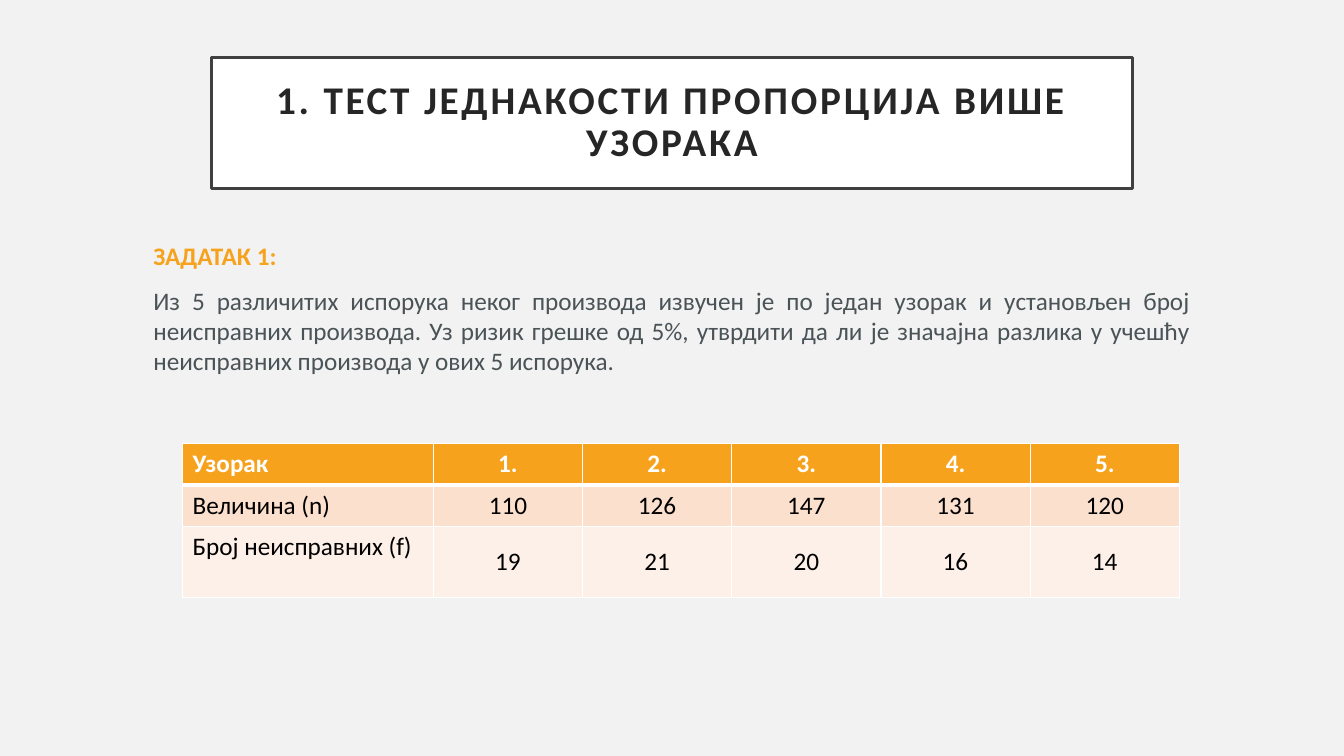
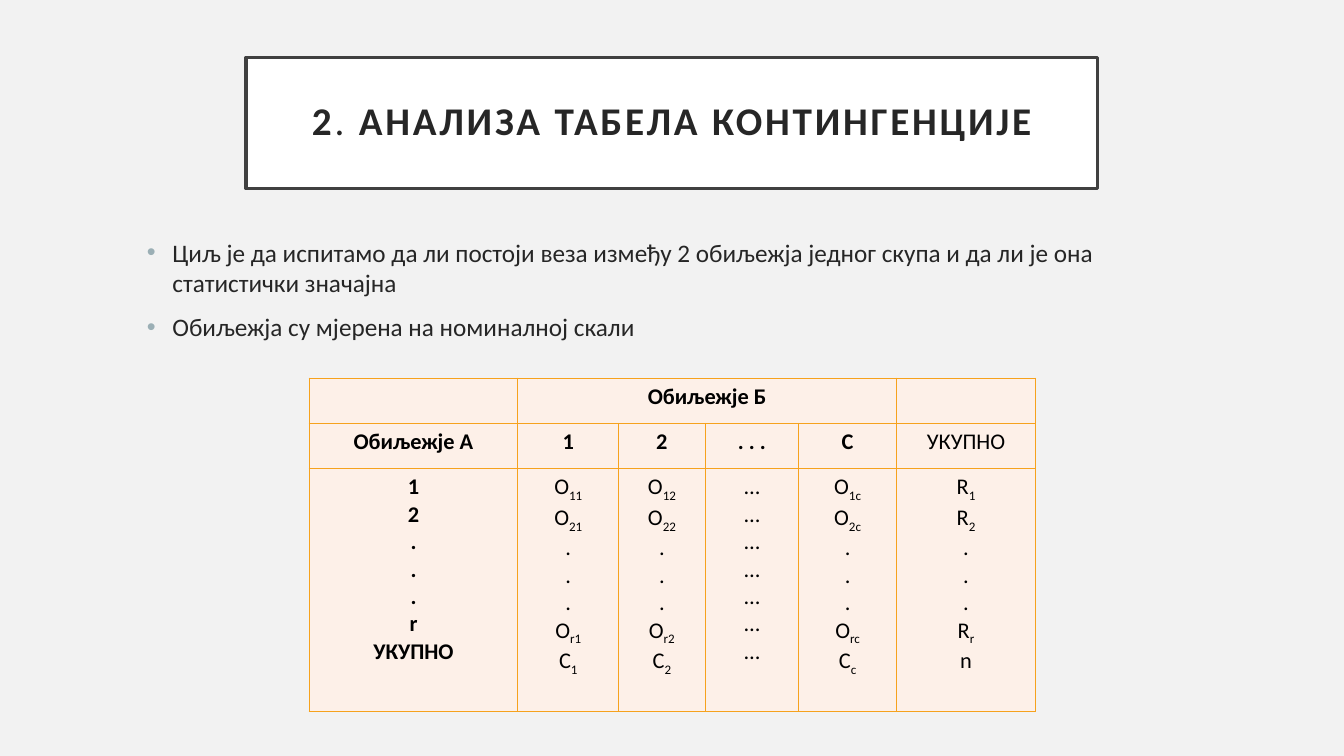
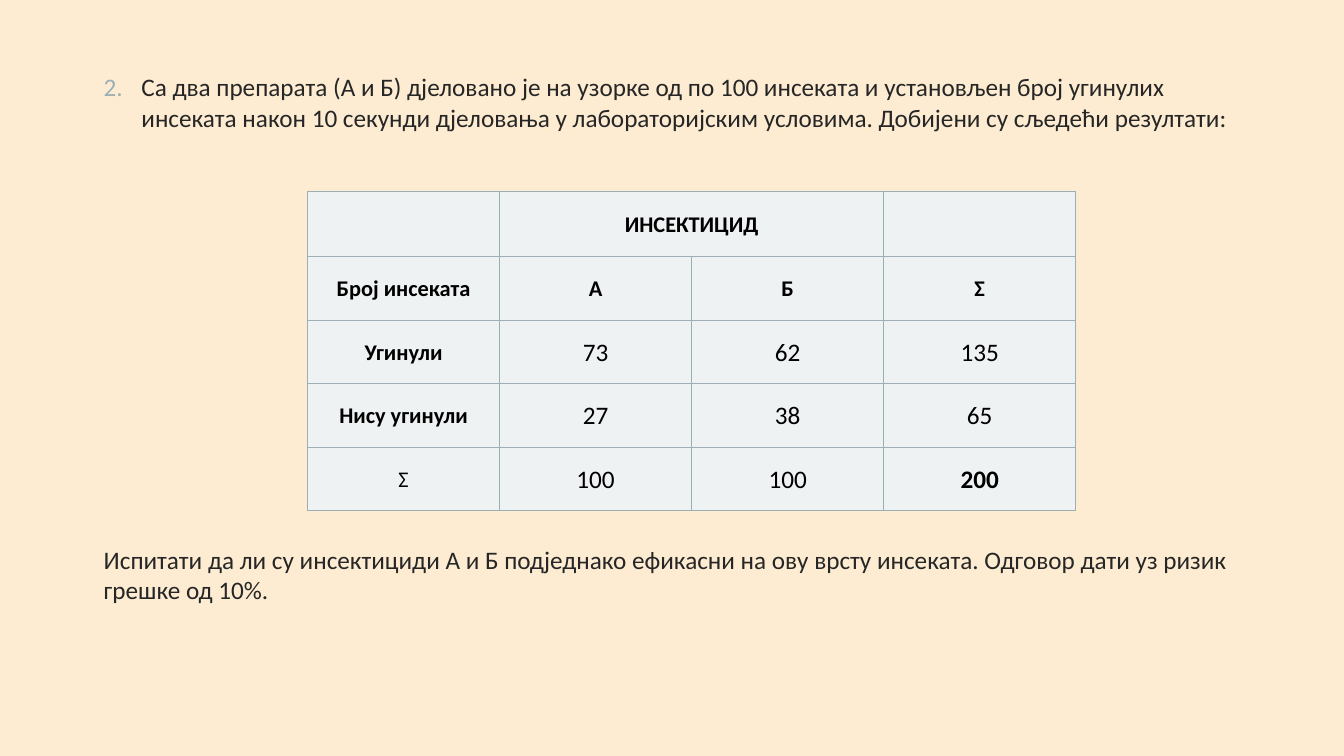
"""Builds three slides on testing proportions and contingency tables."""
from collections.abc import Callable, Sequence
from dataclasses import dataclass

from lxml.etree import SubElement
from pptx import Presentation
from pptx.dml.color import RGBColor
from pptx.enum.text import MSO_ANCHOR as Anchor, MSO_AUTO_SIZE as AutoSize, PP_ALIGN as Align
from pptx.oxml import parse_xml
from pptx.oxml.ns import nsdecls, qn
from pptx.util import Cm, Pt


@dataclass(frozen=True)
class Theme:
    font: str = "Calibri"
    page: str = "F2F2F2"
    page_warm: str = "FDECD2"
    white: str = "FFFFFF"
    black: str = "000000"
    frame: str = "404040"
    ink: str = "262626"
    slate: str = "4A5356"
    orange: str = "F6A21D"
    peach: str = "FBE0CD"
    peach_light: str = "FDF0E8"
    steel: str = "9BAFB5"
    steel_light: str = "EFF2F3"
    title_size: int = 28
    body_size: int = 18
    small_size: int = 16
    body_gap: int = 10


THEME = Theme()
SLIDE_WIDTH, SLIDE_HEIGHT = 33.87, 19.05


@dataclass(frozen=True)
class Box:
    left: float
    top: float
    width: float
    height: float


@dataclass(frozen=True)
class Span:
    text: str
    bold: bool = True


@dataclass(frozen=True)
class BodyLine:
    text: str
    color: str = THEME.ink
    bold: bool = False
    align: Align = Align.LEFT
    gap: float = THEME.body_gap
    hang: float = 0
    bullet: str = ""
    start: int = 0


@dataclass(frozen=True)
class CellLook:
    fill: str
    color: str = THEME.black
    size: int = THEME.body_size
    bold: bool = False
    align: Align = Align.CENTER
    anchor: Anchor = Anchor.MIDDLE


@dataclass(frozen=True)
class Grid:
    left: float
    top: float
    widths: Sequence[float]
    heights: Sequence[float]
    rows: Sequence[Sequence[str]]
    look: Callable[[int, int], CellLook]
    border: str
    heading_rule: float = 1
    heading_span: int = 0
    inset: float | None = None


def rgb(color: str) -> RGBColor:
    return RGBColor.from_string(color)


def style_run(run, size: int, color: str, bold: bool) -> None:
    font = run.font
    font.name, font.size, font.bold = THEME.font, Pt(size), bold
    font.color.rgb = rgb(color)


def place(shape, box: Box) -> None:
    shape.left, shape.top = Cm(box.left), Cm(box.top)
    shape.width, shape.height = Cm(box.width), Cm(box.height)


def add_page(deck, color: str):
    page = deck.slides.add_slide(deck.slide_layouts[1])
    page.background.fill.solid()
    page.background.fill.fore_color.rgb = rgb(color)
    return page


def write_title(page, width: float, spans: Sequence[Span]) -> None:
    title = page.shapes.title
    place(title, Box((SLIDE_WIDTH - width) / 2, 1.45, width, 3.3))
    title.fill.solid()
    title.fill.fore_color.rgb = rgb(THEME.white)
    title.line.color.rgb = rgb(THEME.frame)
    title.line.width = Pt(2.5)
    frame = title.text_frame
    frame.auto_size, frame.word_wrap = AutoSize.NONE, True
    frame.vertical_anchor = Anchor.MIDDLE
    frame.margin_left = frame.margin_right = Cm(0.5)
    frame.margin_top = frame.margin_bottom = Cm(0.5)
    heading = frame.paragraphs[0]
    heading.text = spans[0].text
    for span in spans[1:]:
        heading.add_run().text = span.text
    heading.alignment, heading.line_spacing = Align.CENTER, 0.9
    for run, span in zip(heading.runs, spans):
        style_run(run, THEME.title_size, THEME.ink, span.bold)
        run._r.get_or_add_rPr().set("spc", "200")


def set_bullet(paragraph, line: BodyLine) -> None:
    properties = paragraph._p.get_or_add_pPr()
    properties.set("marL", str(Cm(line.hang)))
    properties.set("indent", str(-Cm(line.hang)))
    if not (line.bullet or line.start):
        SubElement(properties, qn("a:buNone"))
        return
    tint = SubElement(properties, qn("a:buClr"))
    SubElement(tint, qn("a:srgbClr"), val=THEME.steel)
    if line.start:
        SubElement(properties, qn("a:buFont"), typeface=THEME.font)
        SubElement(properties, qn("a:buAutoNum"), type="arabicPeriod", startAt=str(line.start))
    else:
        SubElement(properties, qn("a:buFont"), typeface="Arial")
        SubElement(properties, qn("a:buChar"), char=line.bullet)


def write_body(page, box: Box, lines: Sequence[BodyLine]) -> None:
    body = page.placeholders[1]
    place(body, box)
    frame = body.text_frame
    frame.auto_size, frame.word_wrap = AutoSize.NONE, True
    frame.text = "\n".join(line.text for line in lines)
    for paragraph, line in zip(frame.paragraphs, lines):
        paragraph.alignment = line.align
        paragraph.space_before = Pt(line.gap)
        set_bullet(paragraph, line)
        style_run(paragraph.runs[0], THEME.body_size, line.color, line.bold)


def set_borders(cell, color: str, top: float, bottom: float) -> None:
    properties = cell._tc.get_or_add_tcPr()
    sides = {"lnL": 1, "lnR": 1, "lnT": top, "lnB": bottom}
    for position, (side, width) in enumerate(sides.items()):
        properties.insert(position, parse_xml(
            f'<a:{side} {nsdecls("a")} w="{Pt(width)}"><a:solidFill>'
            f'<a:srgbClr val="{color}"/></a:solidFill></a:{side}>'))


def write_cell(cell, text: str, look: CellLook) -> None:
    cell.fill.solid()
    cell.fill.fore_color.rgb = rgb(look.fill)
    cell.vertical_anchor = look.anchor
    cell.text_frame.text = text
    for paragraph in cell.text_frame.paragraphs:
        base, _, subscript = paragraph.text.partition("_")
        paragraph.text = base
        paragraph.alignment = look.align
        if subscript:
            index = paragraph.add_run()
            index.text = subscript
            index._r.get_or_add_rPr().set("baseline", "-25000")
        for run in paragraph.runs:
            style_run(run, look.size, look.color, look.bold)


def draw_grid(page, grid: Grid) -> None:
    table = page.shapes.add_table(
        len(grid.heights), len(grid.widths), Cm(grid.left), Cm(grid.top),
        Cm(sum(grid.widths)), Cm(sum(grid.heights))).table
    table.first_row = table.horz_banding = False
    for column, width in zip(table.columns, grid.widths):
        column.width = Cm(width)
    for row, height in zip(table.rows, grid.heights):
        row.height = Cm(height)
    for r, texts in enumerate(grid.rows):
        for c, text in enumerate(texts):
            cell = table.cell(r, c)
            write_cell(cell, text, grid.look(r, c))
            set_borders(cell, grid.border, grid.heading_rule if r == 1 else 1,
                        grid.heading_rule if r == 0 else 1)
            if grid.inset is not None:
                cell.margin_left = cell.margin_right = Cm(grid.inset)
                cell.margin_top, cell.margin_bottom = Cm(grid.inset), 0
    if grid.heading_span:
        table.cell(0, 1).merge(table.cell(0, grid.heading_span))


def sample_look(row: int, column: int) -> CellLook:
    heading, label = row == 0, column == 0
    return CellLook(
        (THEME.orange, THEME.peach, THEME.peach_light)[row],
        THEME.white if heading else THEME.black, bold=heading,
        align=Align.LEFT if label else Align.CENTER,
        anchor=Anchor.TOP if label else Anchor.MIDDLE)


def contingency_look(row: int, column: int) -> CellLook:
    return CellLook(THEME.peach_light, size=THEME.small_size,
                    bold=column == 0 or (row < 2 and column < 5), anchor=Anchor.TOP)


def insecticide_look(row: int, column: int) -> CellLook:
    label = row < 2 or column == 0
    grand_total = (row, column) == (4, 3)
    return CellLook(THEME.steel_light, size=THEME.small_size if label else THEME.body_size,
                    bold=grand_total or (label and row < 4))


def stack(first: str, second: str, last: str, total: str) -> str:
    return "\n".join((first, second, ".", ".", ".", last, total))


def observed(column: str) -> str:
    return stack(f"O_1{column}", f"O_2{column}", f"O_r{column}", f"C_{column}")


def build_proportions(deck) -> None:
    page = add_page(deck, THEME.page)
    write_title(page, 23.2, [Span("1. ТЕСТ ЈЕДНАКОСТИ ПРОПОРЦИЈА ВИШЕ УЗОРАКА")])
    write_body(page, Box(3.61, 5.94, 26.64, 11.66), [
        BodyLine("ЗАДАТАК 1:", THEME.orange, bold=True),
        BodyLine("Из 5 различитих испорука неког производа извучен је по један узорак и "
                 "установљен број неисправних производа. Уз ризик грешке од 5%, утврдити да ли "
                 "је значајна разлика у учешћу неисправних производа у ових 5 испорука.",
                 THEME.slate, align=Align.JUSTIFY),
    ])
    draw_grid(page, Grid(
        4.6, 11.18, [6.32] + [3.76] * 5, [1.04, 1.04, 1.8],
        [["Узорак", "1.", "2.", "3.", "4.", "5."],
         ["Величина (n)", "110", "126", "147", "131", "120"],
         ["Број неисправних (f)", "19", "21", "20", "16", "14"]],
        sample_look, THEME.white, heading_rule=3))


def build_contingency(deck) -> None:
    page = add_page(deck, THEME.page)
    write_title(page, 21.46, [Span("2"), Span(". ", bold=False),
                              Span("АНАЛИЗА ТАБЕЛА КОНТИНГЕНЦИЈЕ")])
    goals = ("Циљ је да испитамо да ли постоји веза између 2 обиљежја једног скупа и да ли је "
             "она статистички значајна",
             "Обиљежја су мјерена на номиналној скали")
    write_body(page, Box(3.45, 5.84, 26.97, 11.76),
               [BodyLine(goal, hang=0.64, bullet="•") for goal in goals])
    draw_grid(page, Grid(
        7.79, 9.53, [5.26, 2.54, 2.18, 2.36, 2.46, 3.51], [1.14, 1.14, 6.12],
        [["", "Обиљежје Б", "", "", "", ""],
         ["Обиљежје А", "1", "2", ". . .", "C", "УКУПНО"],
         [stack("1", "2", "r", "УКУПНО"), observed("1"), observed("2"),
          "\n".join("…" * 7), observed("c"), stack("R_1", "R_2", "R_r", "n")]],
        contingency_look, THEME.orange, heading_span=4))


def build_insecticides(deck) -> None:
    page = add_page(deck, THEME.page_warm)
    title = page.shapes.title.element
    title.getparent().remove(title)
    write_body(page, Box(2.36, 1.68, 29.13, 15.7), [
        BodyLine("Са два препарата (А и Б) дјеловано је на узорке од по 100 инсеката и "
                 "установљен број угинулих инсеката након 10 секунди дјеловања у "
                 "лабораторијским условима. Добијени су сљедећи резултати:", hang=0.95, start=2),
        BodyLine("Испитати да ли су инсектициди А и Б подједнако ефикасни на ову врсту "
                 "инсеката. Одговор дати уз ризик грешке од 10%.", gap=294),
    ])
    draw_grid(page, Grid(
        7.75, 4.83, [4.84] * 4, [1.64] + [1.6] * 4,
        [["", "ИНСЕКТИЦИД", "", ""],
         ["Број инсеката", "А", "Б", "Σ"],
         ["Угинули", "73", "62", "135"],
         ["Нису угинули", "27", "38", "65"],
         ["Σ", "100", "100", "200"]],
        insecticide_look, THEME.steel, heading_span=2, inset=0.03))


def main() -> None:
    deck = Presentation()
    deck.slide_width, deck.slide_height = Cm(SLIDE_WIDTH), Cm(SLIDE_HEIGHT)
    for build in (build_proportions, build_contingency, build_insecticides):
        build(deck)
    deck.save("out.pptx")


if __name__ == "__main__":
    main()
